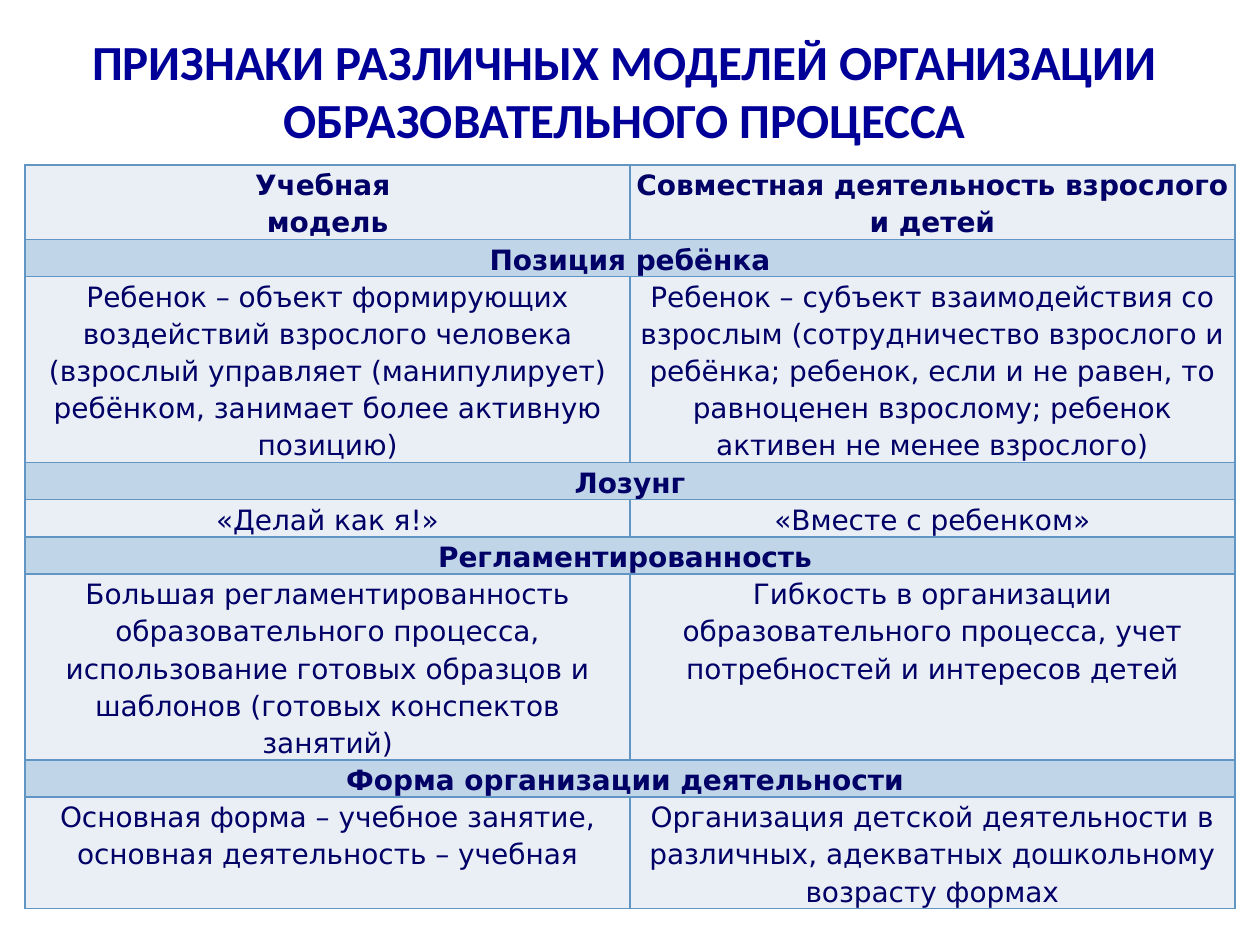
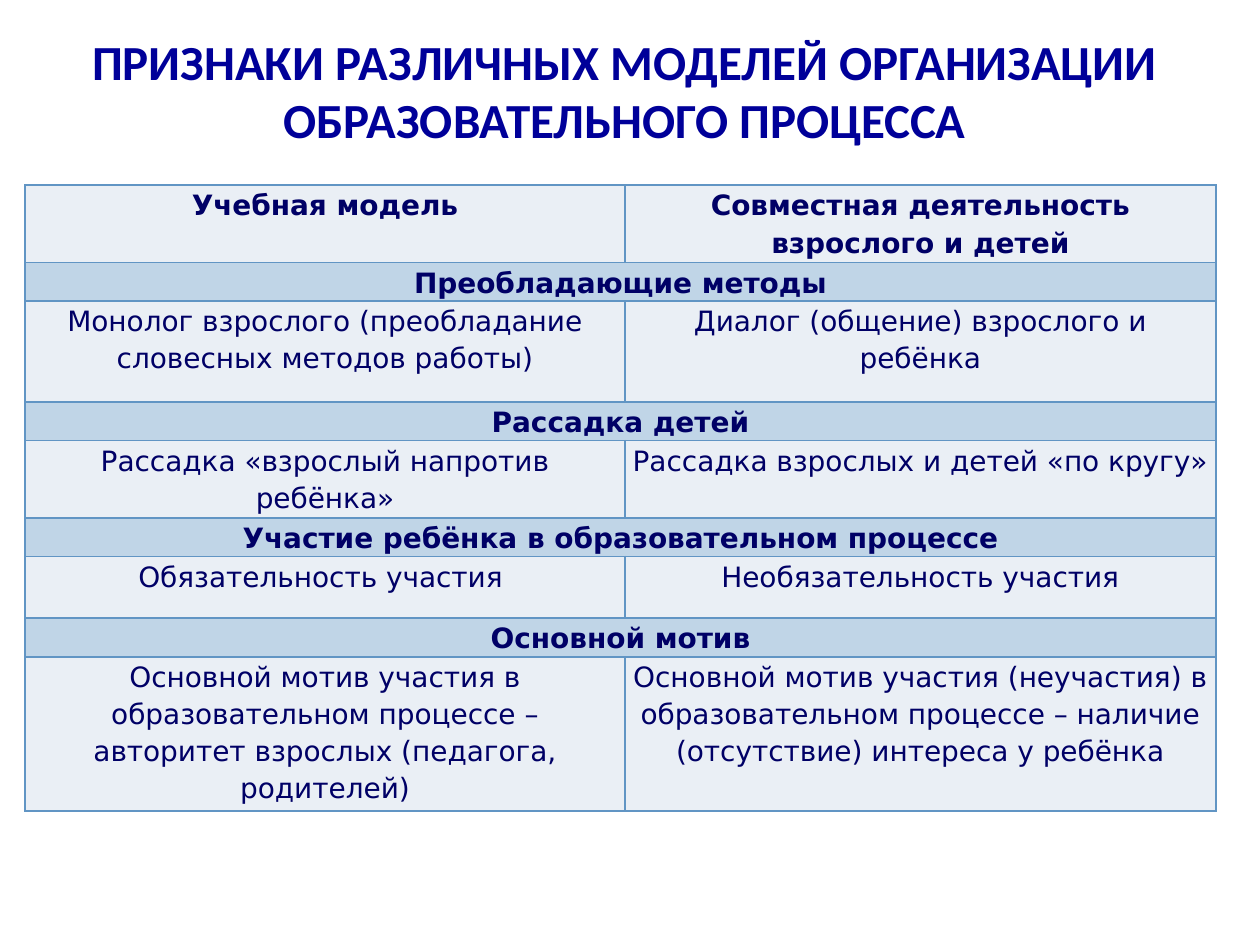
from lxml.etree import SubElement
from pptx import Presentation
from pptx.dml.color import RGBColor
from pptx.enum.text import MSO_ANCHOR, PP_ALIGN
from pptx.oxml.ns import qn
from pptx.util import Inches, Pt

TITLE = "ПРИЗНАКИ РАЗЛИЧНЫХ МОДЕЛЕЙ ОРГАНИЗАЦИИ ОБРАЗОВАТЕЛЬНОГО ПРОЦЕССА"
HEAD = {"name": "Calibri", "size": Pt(28), "bold": True, "color": "000099"}
BODY = {"name": "DejaVu Sans", "size": Pt(16), "bold": False, "color": "000066"}
BOLD = {**BODY, "bold": True}
PALE, BAND, EDGE = "EAEFF5", "C0D5E7", "6195C4"
PADS = {"margin_left": Inches(0.05), "margin_right": Inches(0.05),
        "margin_top": 0, "margin_bottom": 0}
LINE = 0.29

# A row with one text is a band across both columns.
ROLES = [
    ("Учебная \nмодель", "Совместная деятельность взрослого и детей"),
    ("Позиция ребёнка",),
    ("Ребенок – объект формирующих воздействий взрослого человека (взрослый "
     "управляет (манипулирует) ребёнком, занимает более активную позицию)",
     "Ребенок – субъект взаимодействия со взрослым (сотрудничество взрослого и "
     "ребёнка; ребенок, если и не равен, то равноценен взрослому; ребенок "
     "активен не менее взрослого)"),
    ("Лозунг",),
    ("«Делай как я!»", "«Вместе с ребенком»"),
    ("Регламентированность ",),
    ("Большая регламентированность образовательного процесса, использование "
     "готовых образцов и шаблонов (готовых конспектов занятий)",
     "Гибкость в организации образовательного процесса, учет потребностей и "
     "интересов детей"),
    ("Форма организации деятельности ",),
    ("Основная форма – учебное занятие, основная деятельность – учебная",
     "Организация детской деятельности в различных, адекватных дошкольному "
     "возрасту формах"),
]
ROLE_TALL = [LINE * count for count in (2, 1, 5, 1, 1, 1, 5, 1, 3)]

METHODS = [
    ("Учебная модель", "Совместная деятельность взрослого и детей"),
    ("Преобладающие методы",),
    ("Монолог взрослого (преобладание словесных методов работы)",
     "Диалог (общение) взрослого и ребёнка"),
    ("Рассадка детей",),
    ("Рассадка «взрослый напротив ребёнка»",
     "Рассадка взрослых и детей «по кругу»"),
    ("Участие ребёнка в образовательном процессе",),
    ("Обязательность участия ", "Необязательность участия"),
    ("Основной мотив",),
    ("Основной мотив участия в образовательном процессе – авторитет взрослых "
     "(педагога, родителей)",
     "Основной мотив участия (неучастия) в образовательном процессе – наличие "
     "(отсутствие) интереса у ребёнка"),
]
METHOD_TALL = [0.61, 0.3, 0.8, 0.3, 0.61, 0.3, 0.49, 0.3, 1.1]


def color(code):
    return RGBColor.from_string(code)


def write(frame, text, style, space=None):
    frame.text = text
    frame.word_wrap = True
    for para in frame.paragraphs:
        para.alignment = PP_ALIGN.CENTER
        if space:
            para.line_spacing = space
        for run in para.runs:
            for key, value in style.items():
                if key == "color":
                    run.font.color.rgb = color(value)
                else:
                    setattr(run.font, key, value)


def edge(cell):
    """Draw a thin line on all four sides of the cell."""
    props = cell._tc.get_or_add_tcPr()
    for side in ("lnL", "lnR", "lnT", "lnB"):
        line = SubElement(props, qn(f"a:{side}"), w=str(Pt(1)))
        fill = SubElement(line, qn("a:solidFill"))
        SubElement(fill, qn("a:srgbClr"), val=EDGE)


def paint(cell, code):
    for key, value in PADS.items():
        setattr(cell, key, value)
    edge(cell)
    cell.fill.solid()
    cell.fill.fore_color.rgb = color(code)


def add_title(slide, left, top, width, height):
    box = slide.shapes.add_textbox(*map(Inches, (left, top, width, height)))
    box.text_frame.vertical_anchor = MSO_ANCHOR.BOTTOM
    write(box.text_frame, TITLE, HEAD)


def add_grid(slide, left, top, widths, heights, rows):
    box = map(Inches, (left, top, sum(widths), sum(heights)))
    table = slide.shapes.add_table(len(rows), len(widths), *box).table
    table.first_row = table.horz_banding = False
    for col, width in zip(table.columns, widths):
        col.width = Inches(width)
    for index, (texts, height) in enumerate(zip(rows, heights)):
        table.rows[index].height = Inches(height)
        cells = list(table.rows[index].cells)
        band = len(texts) == 1
        for cell in cells:
            paint(cell, BAND if band else PALE)
        if band:
            cells[0].merge(cells[-1])
        style = BOLD if band or index == 0 else BODY
        for cell, text in zip(cells, texts):
            write(cell.text_frame, text, style, 1.15)


def main():
    deck = Presentation()
    deck.slide_width, deck.slide_height = Inches(10), Inches(7.5)
    for top, widths, heights, rows in (
            (1.31, (4.8, 4.8), ROLE_TALL, ROLES),
            (1.47, (4.76, 4.69), METHOD_TALL, METHODS)):
        slide = deck.slides.add_slide(deck.slide_layouts[6])
        add_grid(slide, 0.2, top, widths, heights, rows)
        add_title(slide, 0.35, 0, 9.21, 1.23)
    deck.save("out.pptx")


if __name__ == "__main__":
    main()
